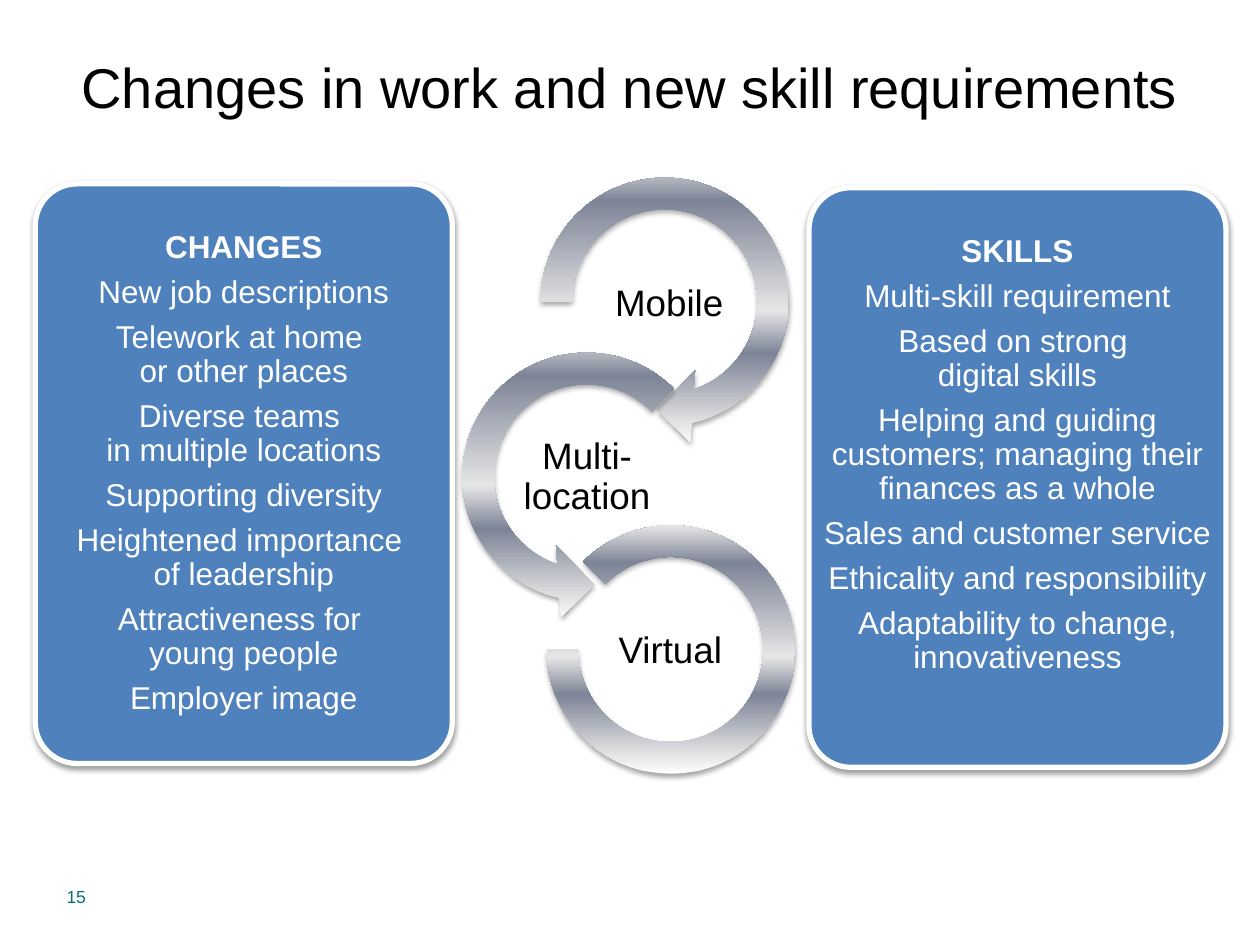
from lxml import etree
from pptx import Presentation
from pptx.dml.color import RGBColor
from pptx.enum.shapes import MSO_SHAPE
from pptx.enum.text import MSO_ANCHOR, PP_ALIGN
from pptx.oxml.ns import qn
from pptx.util import Inches, Pt

ROUND_RECT = MSO_SHAPE.ROUNDED_RECTANGLE
RIGHT_ARROW = MSO_SHAPE.CIRCULAR_ARROW
LEFT_ARROW = MSO_SHAPE.LEFT_CIRCULAR_ARROW
ARC = MSO_SHAPE.BLOCK_ARC
MIDDLE, TOP = MSO_ANCHOR.MIDDLE, MSO_ANCHOR.TOP
CENTER, LEFT = PP_ALIGN.CENTER, PP_ALIGN.LEFT

FONT = "Arial"
COLORS = {
    "text": "000000", "panel": "4F81BD", "white": "FFFFFF",
    "number": "076E75", "light": "E6E6E6", "steel": "7D8496",
}
METAL = [(0, "white"), (7, "light"), (32, "steel"),
         (47, "light"), (85, "steel"), (100, "light")]

CHANGES = ["CHANGES", "New job descriptions", "Telework at home \nor other places",
           "Diverse teams \nin multiple locations", "Supporting diversity",
           "Heightened importance \nof leadership",
           "Attractiveness for \nyoung people", "Employer image"]
SKILLS = ["SKILLS", "Multi-skill requirement", "Based on strong \ndigital skills",
          "Helping and guiding customers; managing their finances as a whole",
          "Sales and customer service", "Ethicality and responsibility",
          "Adaptability to change, innovativeness"]

# Shape, box and label box as shares of the cycle area, adjustments, label
CYCLE = [
    (RIGHT_ARROW, (0.213, 0, 0.787, 0.468), (0.392, 0.172),
     (0.1098, 11.423, 45, 108, 0.125), "Mobile"),
    (LEFT_ARROW, (0, 0.284, 0.787, 0.468), (0.168, 0.452),
     (0.1098, 11.423, 63, 189, 0.125), "Multi-location"),
    (ARC, (0.285, 0.597, 0.677, 0.403), (0.395, 0.734),
     (135, 108, 0.1274), "Virtual"),
]
LABEL_SIZE = (0.454, 0.135)


def rgb(name):
    return RGBColor.from_string(COLORS[name])


def inside(box, shares):
    """Box in inches from shares of an outer box."""
    x, y, w, h = box
    fx, fy, fw, fh = shares
    return x + fx * w, y + fy * h, fw * w, fh * h


def style(r, size, color, bold=False):
    r.font.name, r.font.size, r.font.bold = FONT, Pt(size), bold
    r.font.color.rgb = rgb(color)


def add_shadow(s, alpha, dist):
    effects = etree.SubElement(s._element.spPr, qn("a:effectLst"))
    shadow = etree.SubElement(effects, qn("a:outerShdw"), blurRad=str(Pt(3.1)),
                              dist=str(Pt(dist)), dir="5400000", rotWithShape="0")
    black = etree.SubElement(shadow, qn("a:srgbClr"), val=COLORS["text"])
    etree.SubElement(black, qn("a:alpha"), val=str(alpha * 1000))


def fill_metal(s):
    s.fill.gradient()
    s.fill.gradient_angle = 90
    stops = s._element.spPr.find(".//" + qn("a:gsLst"))
    for stop in list(stops):
        stops.remove(stop)
    for pos, name in METAL:
        stop = etree.SubElement(stops, qn("a:gs"), pos=str(pos * 1000))
        etree.SubElement(stop, qn("a:srgbClr"), val=COLORS[name])


def add_shape(slide, kind, box, adjustments):
    s = slide.shapes.add_shape(kind, *map(Inches, box))
    for i, value in enumerate(adjustments):
        s.adjustments[i] = value
    return s


def add_text(slide, box, lines, size, color, margin, anchor=MIDDLE,
             align=CENTER, heading=False, spare=0):
    """Text box; spare is extra room kept free at the bottom."""
    tf = slide.shapes.add_textbox(*map(Inches, box)).text_frame
    tf.word_wrap = True
    tf.vertical_anchor = anchor
    tf.margin_left = tf.margin_right = tf.margin_top = Inches(margin)
    tf.margin_bottom = Inches(margin + spare)
    for i, line in enumerate(lines):
        p = tf.add_paragraph() if i else tf.paragraphs[0]
        p.alignment = align
        if anchor == MIDDLE:
            p.line_spacing = 0.9
            p.space_after = Pt(size * 0.35)
        for j, part in enumerate(line.split("\n")):
            if j:
                p.add_line_break()
            r = p.add_run()
            r.text = part
            style(r, size, color, heading and i == 0)


def add_title(slide, box, text):
    title = slide.shapes.title
    title.left, title.top, title.width, title.height = map(Inches, box)
    tf = title.text_frame
    tf.vertical_anchor = MIDDLE
    p = tf.paragraphs[0]
    p.alignment = CENTER
    r = p.add_run()
    r.text = text
    style(r, 32, "text")


def add_panel(slide, box, lines, spare=0):
    s = add_shape(slide, ROUND_RECT, box, [0.1])
    s.fill.solid()
    s.fill.fore_color.rgb = rgb("panel")
    s.line.color.rgb = rgb("white")
    s.line.width = Pt(3)
    add_shadow(s, 38, 1.6)
    add_text(slide, inside(box, (0.02, 0.03, 0.96, 0.94)), lines, 18, "white",
             0.04, heading=True, spare=spare)


def add_cycle(slide, box):
    for kind, shares, label_at, adjustments, label in CYCLE:
        s = add_shape(slide, kind, inside(box, shares), adjustments)
        fill_metal(s)
        s.line.fill.background()
        add_shadow(s, 35, 1.8)
        add_text(slide, inside(box, label_at + LABEL_SIZE), [label], 21, "text", 0.01)


def main():
    prs = Presentation()
    prs.slide_width, prs.slide_height = Inches(10), Inches(7.5)
    slide = prs.slides.add_slide(prs.slide_layouts[5])

    add_title(slide, (0.5, 0.06, 9, 1.25), "Changes in work and new skill requirements")
    # Arrows between the two panels
    add_cycle(slide, (3.51, 1.25, 2.91, 4.89))
    # Slide number
    add_text(slide, (0.43, 6.95, 2.33, 0.4), ["15"], 10, "number", 0.1, TOP, LEFT)
    # Panels
    add_panel(slide, (0.28, 1.46, 3.31, 4.6), CHANGES)
    add_panel(slide, (6.42, 1.49, 3.31, 4.6), SKILLS, spare=0.35)

    prs.save("out.pptx")


if __name__ == "__main__":
    main()
